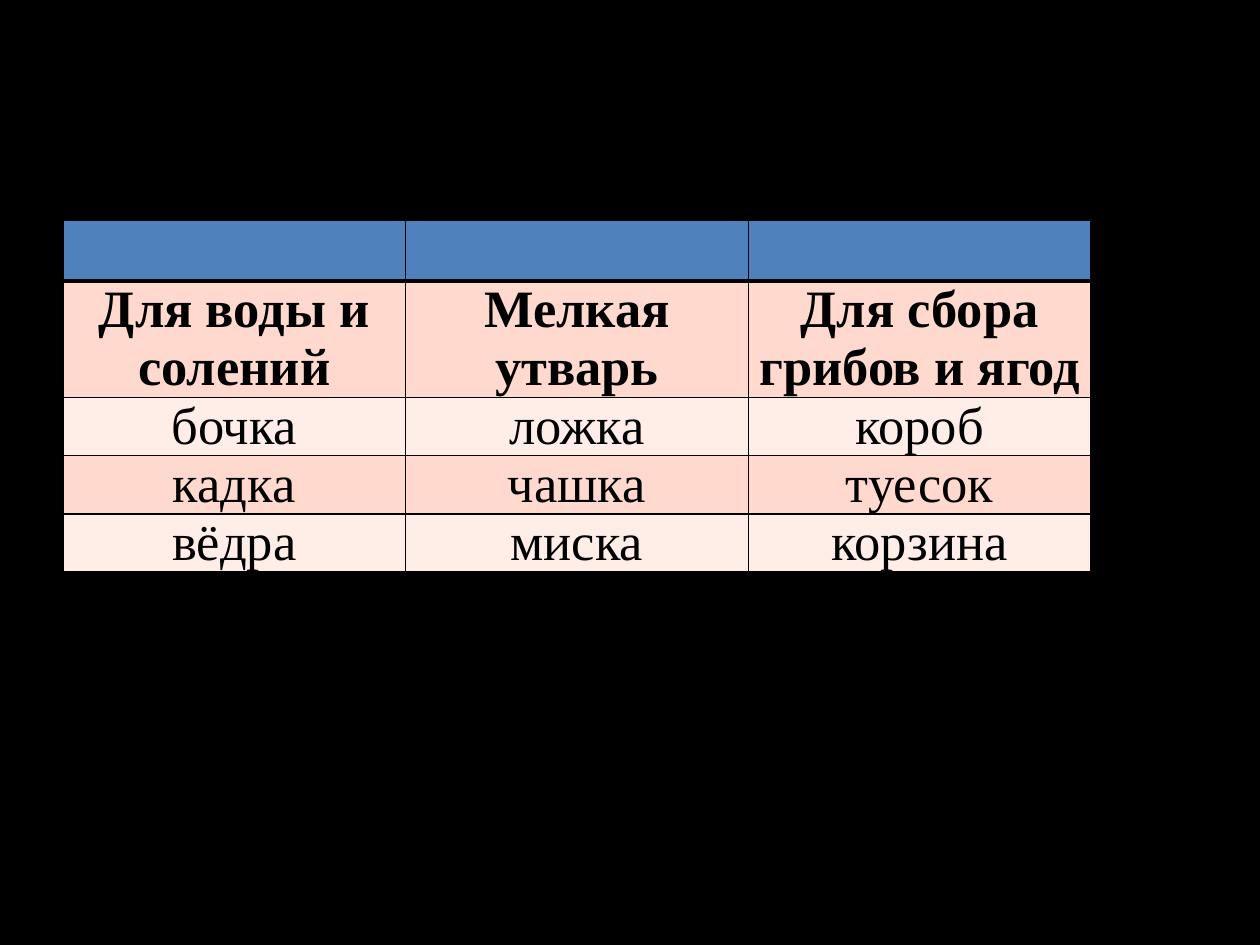
import pptx
import pptx.dml.color
import pptx.enum.text
import pptx.oxml
import pptx.oxml.ns
import pptx.util
from pptx.util import Inches

RGBColor = pptx.dml.color.RGBColor
BLACK = RGBColor(0x00, 0x00, 0x00)
BLUE = RGBColor(0x4F, 0x81, 0xBD)
PINK = RGBColor(0xFF, 0xD9, 0xCE)
PALE_PINK = RGBColor(0xFF, 0xED, 0xE8)

ROWS = [
    ("", "", ""),
    ("Для воды и солений", "Мелкая утварь", "Для сбора грибов и ягод"),
    ("бочка", "ложка", "короб"),
    ("кадка", "чашка", "туесок"),
    ("вёдра", "миска", "корзина"),
]
ROW_FILLS = [BLUE, PINK, PALE_PINK, PINK, PALE_PINK]
ROW_HEIGHTS = [0.48, 0.92, 0.46, 0.46, 0.46]
CELL_FORMAT = {
    "margin_left": Inches(0.07),
    "margin_right": Inches(0.07),
    "margin_top": 0,
    "margin_bottom": 0,
}
FONT_FORMAT = {"name": "Times New Roman", "size": pptx.util.Pt(30)}


def set_borders(cell, widths):
    """Draw black borders of the given point widths, keyed by side."""
    tc_pr = cell._tc.get_or_add_tcPr()
    for i, (side, width) in enumerate(widths.items()):
        tc_pr.insert(i, pptx.oxml.parse_xml(
            f'<a:ln{side} {pptx.oxml.ns.nsdecls("a")} w="{pptx.util.Pt(width)}">'
            f'<a:solidFill><a:srgbClr val="{BLACK}"/></a:solidFill></a:ln{side}>'))


def write_cell(cell, text, bold):
    """Fill a cell with one centred paragraph."""
    for name, value in CELL_FORMAT.items():
        setattr(cell, name, value)
    p = cell.text_frame.paragraphs[0]
    p.alignment = pptx.enum.text.PP_ALIGN.CENTER
    r = p.add_run()
    r.text = text
    for name, value in {**FONT_FORMAT, "bold": bold}.items():
        setattr(r.font, name, value)
    r.font.color.rgb = BLACK


def add_utensil_table(s, left, top, width):
    """Place the table of household utensils in the given box."""
    cols = len(ROWS[0])
    height = Inches(sum(ROW_HEIGHTS))
    table = s.shapes.add_table(len(ROWS), cols, left, top, width, height).table
    for row, row_height in zip(table.rows, ROW_HEIGHTS):
        row.height = Inches(row_height)
    for i, (texts, fill) in enumerate(zip(ROWS, ROW_FILLS)):
        for j, text in enumerate(texts):
            cell = table.cell(i, j)
            cell.fill.solid()
            cell.fill.fore_color.rgb = fill
            set_borders(cell, {"L": 1, "R": 1, "T": 3 if i == 1 else 1,
                               "B": 3 if i == 0 else 1})
            if text:
                write_cell(cell, text, bold=i == 1)


def main():
    """Build the slide and save it."""
    prs = pptx.Presentation()
    prs.slide_width, prs.slide_height = Inches(10), Inches(7.5)
    s = prs.slides.add_slide(prs.slide_layouts[6])
    s.background.fill.solid()
    s.background.fill.fore_color.rgb = BLACK
    add_utensil_table(s, Inches(0.5), Inches(1.75), Inches(8.16))
    prs.save("out.pptx")


if __name__ == "__main__":
    main()
